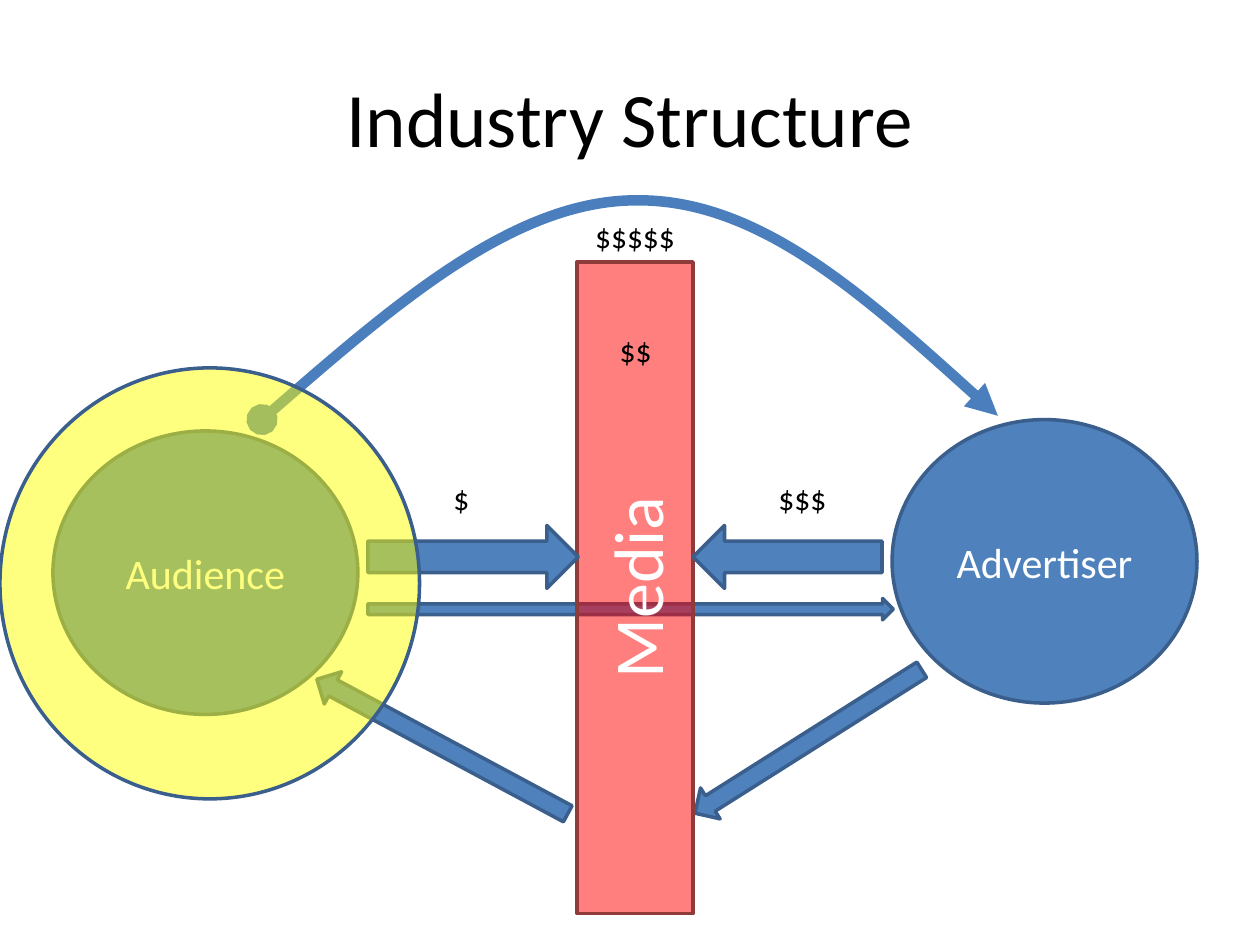
from dataclasses import dataclass

from lxml import etree
from pptx import Presentation
from pptx.dml.color import RGBColor
from pptx.enum.shapes import MSO_SHAPE as Shape
from pptx.enum.text import MSO_ANCHOR as Anchor, PP_ALIGN as Align
from pptx.oxml.ns import qn
from pptx.util import Inches, Pt


@dataclass(frozen=True)
class Theme:
    font: str = "Calibri"
    blue: str = "4F81BD"
    blue_edge: str = "3A5F8C"
    curve: str = "4B7EBC"
    red: str = "FF0000"
    red_edge: str = "8E3B39"
    yellow: str = "FFFF00"
    black: str = "000000"
    white: str = "FFFFFF"
    title: int = 44
    media: int = 40
    party: int = 24
    money: int = 18
    edge: int = 2
    thick: int = 6


class SlideBuilder:
    def __init__(self, slide, theme):
        self.slide = slide
        self.theme = theme

    def set_text(self, tf, text, size, color, align=Align.CENTER):
        p = tf.paragraphs[0]
        p.text = text
        p.alignment = align
        p.font.name = self.theme.font
        p.font.size = Pt(size)
        p.font.color.rgb = RGBColor.from_string(color)

    def title(self, text, *box):
        sp = self.slide.shapes.title
        sp.left, sp.top, sp.width, sp.height = map(Inches, box)
        sp.text_frame.vertical_anchor = Anchor.MIDDLE
        self.set_text(sp.text_frame, text, self.theme.title, self.theme.black)

    def shape(self, kind, *box, fill=None, edge=None, alpha=None, rotation=0):
        t = self.theme
        sp = self.slide.shapes.add_shape(kind, *map(Inches, box))
        sp.rotation = rotation
        sp.shadow.inherit = False
        sp.fill.solid()
        sp.fill.fore_color.rgb = RGBColor.from_string(fill or t.blue)
        if alpha:
            color = sp._element.spPr.find(qn("a:solidFill"))[0]
            etree.SubElement(color, qn("a:alpha")).set("val", str(alpha * 1000))
        sp.line.color.rgb = RGBColor.from_string(edge or t.blue_edge)
        sp.line.width = Pt(t.edge)
        return sp

    def arrow(self, *box, rotation=0):
        return self.shape(Shape.RIGHT_ARROW, *box, rotation=rotation)

    def label(self, sp, text, size, vert=None):
        tf = sp.text_frame
        tf.vertical_anchor = Anchor.MIDDLE
        self.set_text(tf, text, size, self.theme.white)
        if vert:
            sp._element.txBody.find(qn("a:bodyPr")).set("vert", vert)

    def money(self, text, *box, align=Align.CENTER):
        tf = self.slide.shapes.add_textbox(*map(Inches, box)).text_frame
        tf.word_wrap = True
        self.set_text(tf, text, self.theme.money, self.theme.black, align)

    def curve(self, start, *points):
        """Open Bézier line: every three points make one curve segment."""
        points = [tuple(map(Inches, pt)) for pt in points]
        builder = self.slide.shapes.build_freeform(*map(Inches, start))
        builder.add_line_segments(points, close=False)
        sp = builder.convert_to_shape()
        sp.shadow.inherit = False
        sp.fill.background()
        sp.line.color.rgb = RGBColor.from_string(self.theme.curve)
        sp.line.width = Pt(self.theme.thick)

        # Turn each run of three straight segments into a cubic curve
        outline = sp._element.spPr.find(".//" + qn("a:path"))
        lines = outline.findall(qn("a:lnTo"))
        for i in range(0, len(lines), 3):
            cubic = etree.SubElement(outline, qn("a:cubicBezTo"))
            for line in lines[i:i + 3]:
                cubic.append(line[0])
                outline.remove(line)

        ln = sp._element.spPr.find(qn("a:ln"))
        for tag, kind in (("a:headEnd", "oval"), ("a:tailEnd", "triangle")):
            etree.SubElement(ln, qn(tag)).set("type", kind)


def main():
    prs = Presentation()
    prs.slide_width, prs.slide_height = Inches(10), Inches(7.5)
    theme = Theme()
    s = SlideBuilder(prs.slides.add_slide(prs.slide_layouts[5]), theme)

    # Flows that pass behind the media bar
    s.arrow(5.35, 5.74, 2.13, 0.29, rotation=147.7)
    s.arrow(2.92, 4.75, 4.17, 0.17)
    s.title("Industry Structure", 0.5, 0.3, 9, 1.25)

    # Advertiser, audience and the media between them
    for name, left, top in (("Advertiser", 7.08, 3.33), ("Audience", 0.42, 3.42)):
        party = s.shape(Shape.OVAL, left, top, 2.42, 2.25)
        s.label(party, name, theme.party)
    media = s.shape(Shape.RECTANGLE, 4.58, 2.08, 0.92, 5.17,
                    fill=theme.red, edge=theme.red_edge, alpha=50)
    s.label(media, "Media", theme.media, vert="vert270")

    # Flows from and to the media, with their payments
    s.arrow(2.38, 5.78, 2.26, 0.29, rotation=208.2)
    s.arrow(2.92, 4.17, 1.67, 0.5)
    s.money("$", 3.5, 3.75, 0.5, 0.42, align=Align.LEFT)
    s.arrow(5.5, 4.17, 1.5, 0.5, rotation=180)
    s.money("$$$", 6.08, 3.75, 0.83, 0.42, align=Align.LEFT)

    # Direct route over the media
    s.curve((2.08, 3.33),
            (3.08, 2.46), (4.08, 1.59), (5.05, 1.59),
            (6.02, 1.58), (6.97, 2.44), (7.92, 3.3))
    s.money("$$$$$", 4.5, 1.67, 1.08, 0.4)
    s.money("$$", 4.67, 2.58, 0.75, 0.4)

    # Highlight over the audience
    s.shape(Shape.OVAL, 0, 2.92, 3.33, 3.42, fill=theme.yellow, alpha=50)

    prs.save("out.pptx")


if __name__ == "__main__":
    main()
